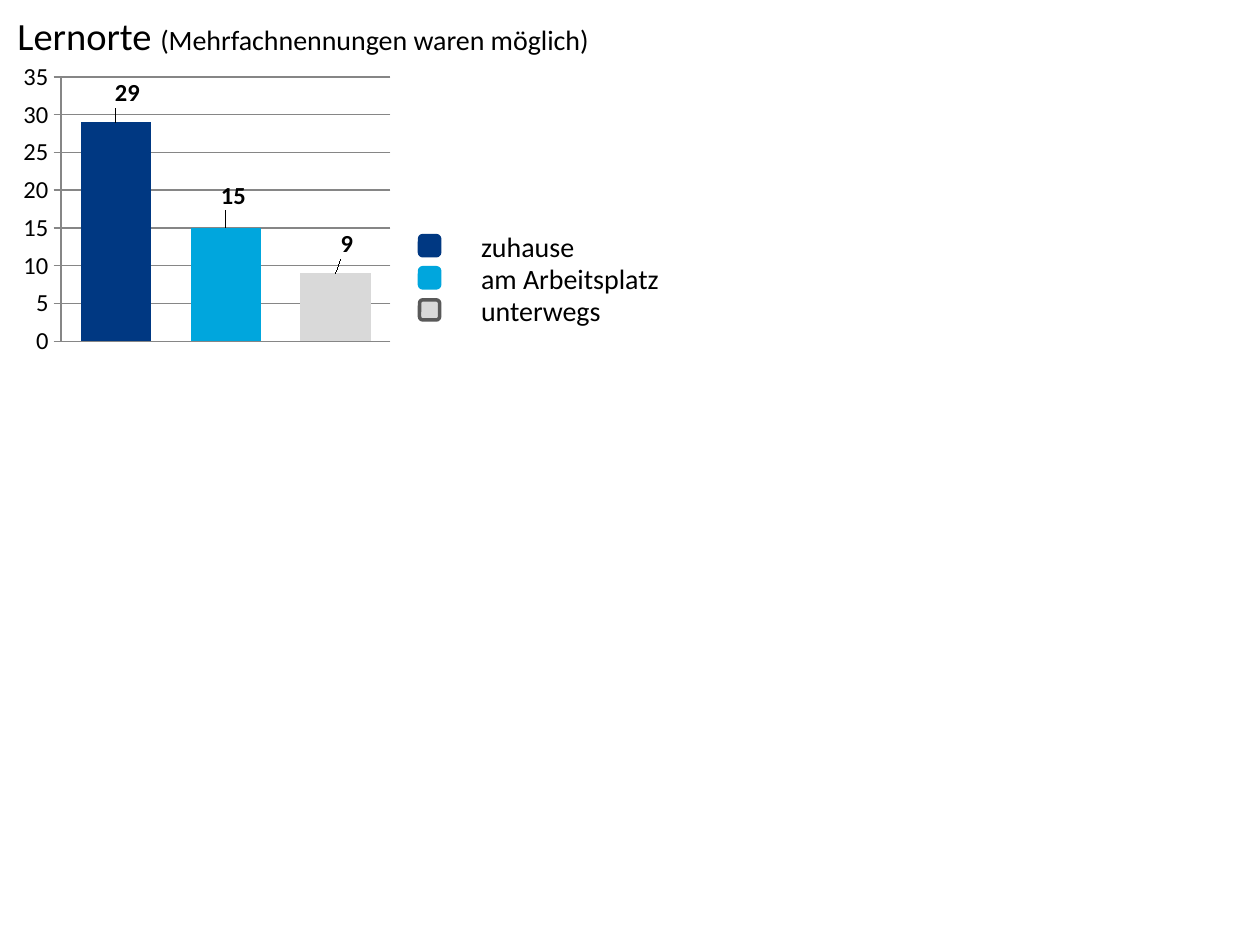
from dataclasses import dataclass

from lxml.etree import SubElement as Sub
from pptx import Presentation
from pptx.chart.data import CategoryChartData as ChartData
from pptx.dml.color import RGBColor as Rgb
from pptx.enum.chart import XL_CHART_TYPE as Kind, XL_LABEL_POSITION as Pos
from pptx.enum.chart import XL_TICK_LABEL_POSITION as TickPos, XL_TICK_MARK as Tick
from pptx.enum.shapes import MSO_SHAPE as Shape
from pptx.enum.text import MSO_AUTO_SIZE as Fit
from pptx.oxml import parse_xml
from pptx.oxml.ns import nsdecls, qn
from pptx.util import Inches, Pt


@dataclass(frozen=True)
class Theme:
    font: str = "Calibri"
    ink: str = "000000"
    grid: str = "868686"
    edge: str = "595959"
    navy: str = "003882"
    sky: str = "00A6DD"
    pale: str = "D9D9D9"
    head: int = 22
    body: int = 16
    label: int = 14


T = Theme()
WIDE, HIGH = 10, 7.5

# name, value, fill, outline of the key, shift of the value label
PLACES = [
    ("zuhause", 29, T.navy, T.navy, (0.03, -0.03)),
    ("am Arbeitsplatz", 15, T.sky, T.sky, (0.02, -0.04)),
    ("unterwegs", 9, T.pale, T.edge, (0.03, -0.03)),
]
NAME_WIDTHS = [0.95, 1.63, 1.16]
KEY_LEFT, KEY_TOP, KEY_SIZE, KEY_STEP = 3.33, 1.87, 0.16, 0.255


def box(x, y, w, h):
    return [Inches(n) for n in (x, y, w, h)]


def style(font, size, bold=False):
    font.name, font.size, font.bold = T.font, Pt(size), bold
    font.color.rgb = Rgb.from_string(T.ink)


def paint(fill, color):
    fill.solid()
    fill.fore_color.rgb = Rgb.from_string(color)


def add_text(shapes, area, runs, wrap):
    frame = shapes.add_textbox(*area).text_frame
    frame.word_wrap = wrap
    frame.auto_size = Fit.SHAPE_TO_FIT_TEXT
    for text, size in runs:
        run = frame.paragraphs[0].add_run()
        run.text = text
        style(run.font, size)


def layout(**vals):
    """Return a manual chart layout; keys are the names of its parts."""
    node = parse_xml(f"<c:layout {nsdecls('c')}><c:manualLayout/></c:layout>")
    for key, val in vals.items():
        Sub(node[0], qn(f"c:{key}")).set("val", str(val))
    return node


def set_axes(chart):
    chart.category_axis.visible = False
    axis = chart.value_axis
    axis.minimum_scale, axis.maximum_scale, axis.major_unit = 0, 35, 5
    axis.major_tick_mark, axis.minor_tick_mark = Tick.OUTSIDE, Tick.NONE
    axis.tick_label_position = TickPos.NEXT_TO_AXIS
    axis.tick_labels.number_format = "0"
    axis.tick_labels.number_format_is_linked = False
    style(axis.tick_labels.font, T.label)
    axis.has_major_gridlines = True
    for part in (axis, axis.major_gridlines):
        paint(part.format.line.fill, T.grid)
        part.format.line.width = Pt(0.75)


def add_bars(slide):
    data = ChartData(number_format="#,##0")
    data.categories = [str(n + 1) for n in range(len(PLACES))]
    data.add_series("Series 1", [place[1] for place in PLACES])
    area = box(0.12, 0.44, 3.04, 2.44)
    chart = slide.shapes.add_chart(Kind.COLUMN_CLUSTERED, *area, data).chart
    chart.has_legend = chart.has_title = False
    style(chart.font, 10)
    set_axes(chart)

    plot = chart.plots[0]
    plot.gap_width, plot.vary_by_categories = 56, False
    bars = plot.series[0]
    labels = bars.data_labels
    labels.show_value = True
    labels.number_format, labels.number_format_is_linked = "#,##0", False
    labels.position = Pos.OUTSIDE_END
    style(labels.font, T.label, True)
    for i, (_, _, color, _, (dx, dy)) in enumerate(PLACES):
        point = bars.points[i]
        paint(point.format.fill, color)
        label = point.data_label
        label.position = Pos.OUTSIDE_END
        style(label.font, T.label, True)
        node = labels._element.findall(qn("c:dLbl"))[i]
        node.insert(1, layout(x=dx, y=dy))

    inner = chart._chartSpace.chart.plotArea
    for old in inner.findall(qn("c:layout")):
        inner.remove(old)
    inner.insert(0, layout(layoutTarget="inner", xMode="edge", yMode="edge",
                           x=0.12, y=0.07, w=0.86, h=0.86))


def add_key(slide, row):
    name, _, color, edge, _ = PLACES[row]
    top = KEY_TOP + row * KEY_STEP
    group = slide.shapes.add_group_shape().shapes
    mark = group.add_shape(Shape.ROUNDED_RECTANGLE,
                           *box(KEY_LEFT, top, KEY_SIZE, KEY_SIZE))
    mark.shadow.inherit = False
    paint(mark.fill, color)
    paint(mark.line.fill, edge)
    mark.line.width = Pt(2)
    add_text(group, box(3.72, top - 0.1, NAME_WIDTHS[row], 0.37),
             [(name, T.body)], False)


def main():
    deck = Presentation()
    deck.slide_width, deck.slide_height = Inches(WIDE), Inches(HIGH)
    slide = deck.slides.add_slide(deck.slide_layouts[6])
    add_text(slide.shapes, box(0.04, 0.05, 5.35, 0.47),
             [("Lernorte ", T.head),
              ("(Mehrfachnennungen waren möglich)", T.body)], True)
    add_bars(slide)
    for row in range(len(PLACES)):
        add_key(slide, row)
    deck.save("out.pptx")


if __name__ == "__main__":
    main()
